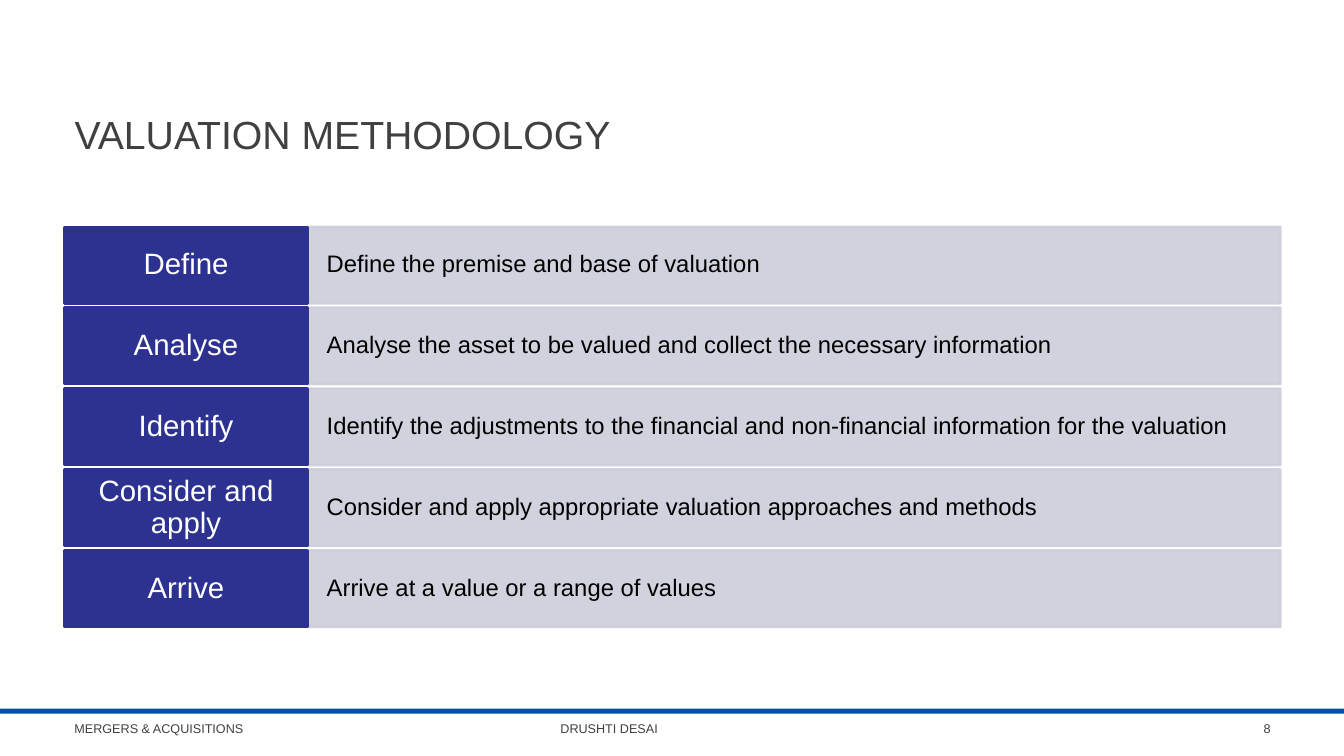
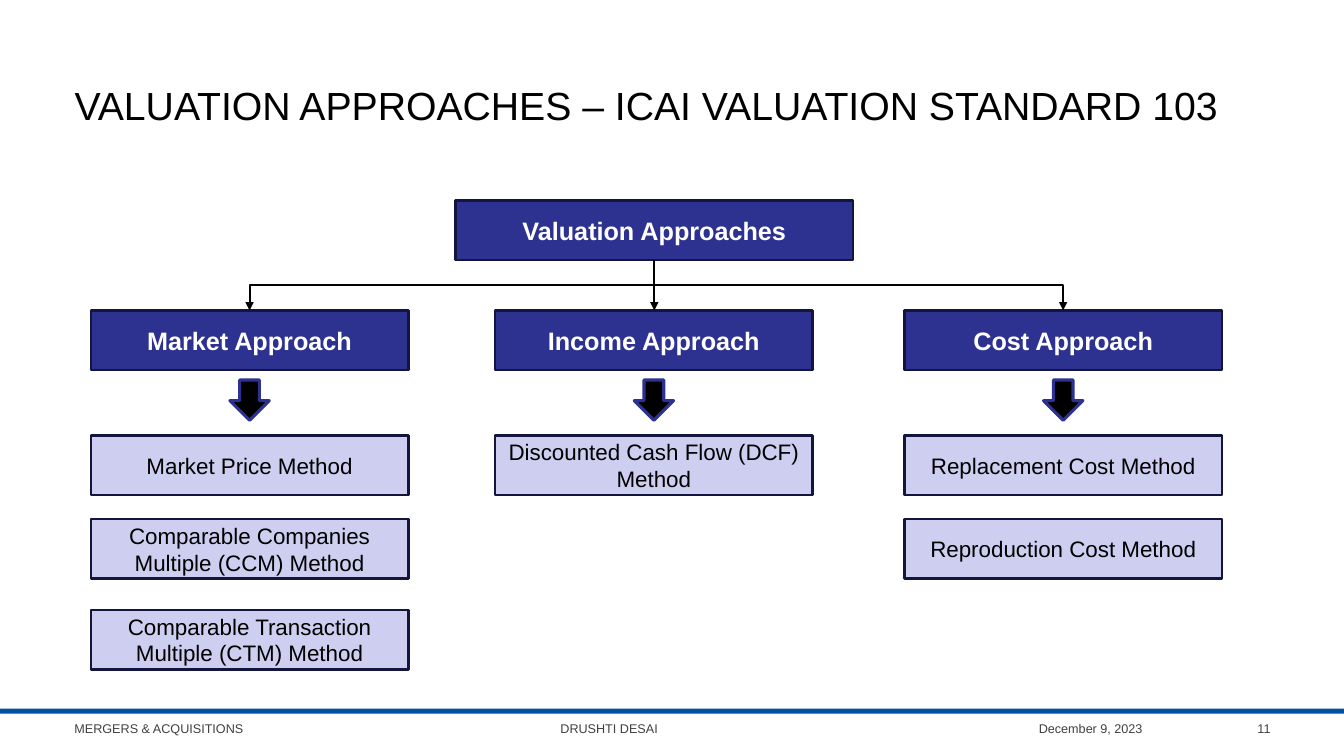
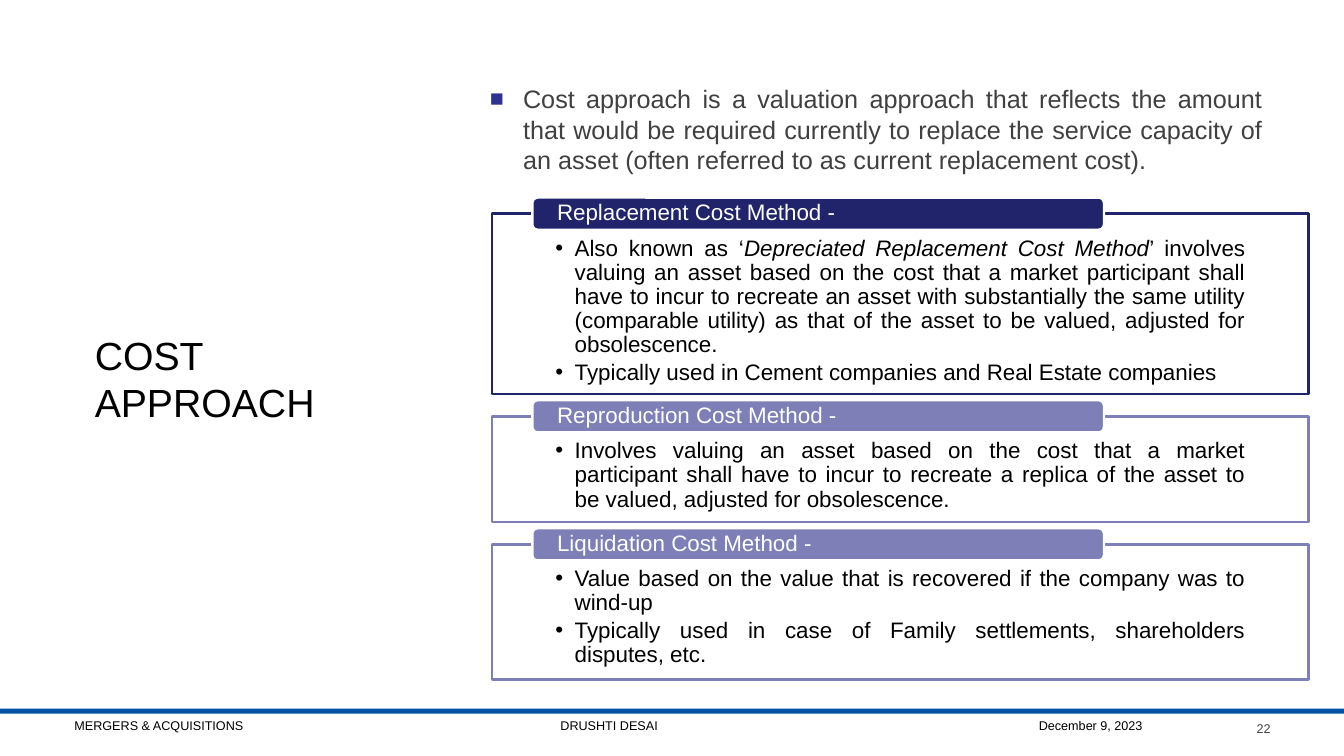
from dataclasses import dataclass

from lxml import etree
from pptx import Presentation
from pptx.dml.color import RGBColor
from pptx.enum.shapes import MSO_CONNECTOR, MSO_SHAPE
from pptx.enum.text import MSO_ANCHOR, MSO_AUTO_SIZE, PP_ALIGN
from pptx.oxml.ns import qn
from pptx.util import Inches, Pt

RECT, ROUND, DOWN = MSO_SHAPE.RECTANGLE, MSO_SHAPE.ROUNDED_RECTANGLE, MSO_SHAPE.DOWN_ARROW
ELBOW, STRAIGHT = MSO_CONNECTOR.ELBOW, MSO_CONNECTOR.STRAIGHT
LEFT, CENTER, RIGHT, JUSTIFY = PP_ALIGN.LEFT, PP_ALIGN.CENTER, PP_ALIGN.RIGHT, PP_ALIGN.JUSTIFY
TOP, MIDDLE = MSO_ANCHOR.TOP, MSO_ANCHOR.MIDDLE


@dataclass(frozen=True)
class Theme:
    font: str = "Arial"
    band: str = "0152A2"
    navy: str = "2D3190"
    edge: str = "14153F"
    deep: str = "21246B"
    muted: str = "7D7FB6"
    pale: str = "CECFF0"
    bar: str = "CDCEDB"
    grey: str = "404040"
    black: str = "000000"
    white: str = "FFFFFF"
    title: int = 28
    step: int = 21
    heading: int = 18
    detail: int = 17
    body: int = 16
    footer: int = 9
    line: float = 1.75


T = Theme()

COURSE, SPEAKER, DATE = "MERGERS & ACQUISITIONS", "DRUSHTI DESAI", "December 9, 2023"

STEPS = [
    ("Define", "Define the premise and base of valuation"),
    ("Analyse", "Analyse the asset to be valued and collect the necessary information"),
    ("Identify", "Identify the adjustments to the financial and non-financial information for the valuation"),
    ("Consider and apply", "Consider and apply appropriate valuation approaches and methods"),
    ("Arrive", "Arrive at a value or a range of values"),
]

APPROACHES = [
    (0.9, "Market Approach", [
        "Market Price Method",
        "Comparable Companies Multiple (CCM) Method",
        "Comparable Transaction Multiple (CTM) Method",
    ]),
    (4.91, "Income Approach", ["Discounted Cash Flow (DCF) Method"]),
    (8.97, "Cost Approach", ["Replacement Cost Method", "Reproduction Cost Method"]),
]

COST_INTRO = (
    "Cost approach is a valuation approach that reflects the amount that would be required "
    "currently to replace the service capacity of an asset (often referred to as current "
    "replacement cost)."
)
COST_METHODS = [
    (2.12, 1.79, T.deep, "Replacement Cost Method -", [
        [
            ("Also known as ‘", False),
            ("Depreciated Replacement Cost Method", True),
            ("’ involves valuing an asset based on the cost that a market participant shall have "
             "to incur to recreate an asset with substantially the same utility (comparable "
             "utility) as that of the asset to be valued, adjusted for obsolescence.", False),
        ],
        "Typically used in Cement companies and Real Estate companies",
    ]),
    (4.13, 1.05, T.muted, "Reproduction Cost Method -", [
        "Involves valuing an asset based on the cost that a market participant shall have to "
        "incur to recreate a replica of the asset to be valued, adjusted for obsolescence.",
    ]),
    (5.4, 1.34, T.muted, "Liquidation Cost Method -", [
        "Value based on the value that is recovered if the company was to wind-up",
        "Typically used in case of Family settlements, shareholders disputes, etc.",
    ]),
]


def rgb(value):
    return RGBColor.from_string(value)


def sub(parent, tag, **attrs):
    return etree.SubElement(parent, qn(tag), {k: str(v) for k, v in attrs.items()})


def set_bullet(p, char, indent, color, percent=100):
    pPr = p._p.get_or_add_pPr()
    pPr.set("marL", str(Inches(indent)))
    pPr.set("indent", str(-Inches(indent)))
    sub(sub(pPr, "a:buClr"), "a:srgbClr", val=color)
    sub(pPr, "a:buSzPct", val=percent * 1000)
    sub(pPr, "a:buFont", typeface=T.font)
    sub(pPr, "a:buChar", char=char)


def set_tab(p, pos):
    tabs = sub(p._p.get_or_add_pPr(), "a:tabLst")
    sub(tabs, "a:tab", pos=Inches(pos), algn="l")


def write(sp, paras, size, color, align=LEFT, anchor=MIDDLE, bold=False,
          insets=(0.1, 0.05, 0.1, 0.05), spacing=None, after=0, bullet=None, tab=None):
    tf = sp.text_frame
    tf.word_wrap = True
    tf.auto_size = MSO_AUTO_SIZE.NONE
    tf.vertical_anchor = anchor
    tf.margin_left, tf.margin_top, tf.margin_right, tf.margin_bottom = map(Inches, insets)
    for i, runs in enumerate(paras):
        p = tf.add_paragraph() if i else tf.paragraphs[0]
        if bullet:
            set_bullet(p, *bullet)
        if tab:
            set_tab(p, tab)
        p.alignment = align
        p.space_before = Pt(0)
        p.space_after = Pt(after)
        if spacing:
            p.line_spacing = spacing
        for text, italic in [(runs, False)] if isinstance(runs, str) else runs:
            r = p.add_run()
            r.text = text
            f = r.font
            f.name, f.size, f.bold, f.italic = T.font, Pt(size), bold, italic
            f.color.rgb = rgb(color)


def add_box(s, kind, at, fill, line=None, width=T.line, alpha=None):
    sp = s.shapes.add_shape(kind, *map(Inches, at))
    sp.shadow.inherit = False
    sp.fill.solid()
    sp.fill.fore_color.rgb = rgb(fill)
    if line:
        sp.line.color.rgb = rgb(line)
        sp.line.width = Pt(width)
    else:
        sp.line.fill.background()
    if alpha:
        for clr in list(sp.element.spPr.iter(qn("a:srgbClr"))):
            sub(clr, "a:alpha", val=alpha * 1000)
    return sp


def add_text(s, at, paras, size, color, **style):
    write(s.shapes.add_textbox(*map(Inches, at)), paras, size, color, **style)


def add_arrow(s, x1, y1, x2, y2):
    if x1 == x2:
        kind, ends, rot = STRAIGHT, (x1, y1, x2, y2), 0
    else:
        w, h = y2 - y1, abs(x2 - x1)
        left, top = (x1 + x2 - w) / 2, (y1 + y2 - h) / 2
        kind, rot = ELBOW, 90 if x2 < x1 else 270
        start, end = (left, left + w) if x2 < x1 else (left + w, left)
        ends = (start, top, end, top + h)
    c = s.shapes.add_connector(kind, *map(Inches, ends))
    c.line.color.rgb = rgb(T.black)
    c.line.width = Pt(1.5)
    spPr = c.element.spPr
    if rot:
        spPr.find(qn("a:xfrm")).set("rot", str(rot * 60000))
    sub(spPr.find(qn("a:ln")), "a:tailEnd", type="triangle")
    sub(spPr, "a:effectLst")


def add_slide(prs, title, at, color, number, date=None, footer_top=7.03, footer_color=T.grey):
    s = prs.slides.add_slide(prs.slide_layouts[5])
    sp = s.shapes.title
    sp.left, sp.top, sp.width, sp.height = map(Inches, at)
    write(sp, [title], T.title, color)
    add_text(s, (0.64, footer_top, 7.56, 0.4), [f"{COURSE}\t{SPEAKER}"],
             T.footer, footer_color, tab=4.82)
    if date:
        add_text(s, (8.32, footer_top, 3.11, 0.4), [date], T.footer, footer_color, align=RIGHT)
    add_text(s, (11.55, 7.03, 1.15, 0.4), [str(number)], T.footer, T.grey, align=RIGHT)
    return s


def add_band(prs, s):
    band = add_box(s, RECT, (0, 7.03, 13.33, 0.05), T.band)
    prs.slide_layouts[5].shapes.element.append(band.element)


def methodology(prs):
    s = add_slide(prs, "VALUATION METHODOLOGY", (0.64, 0.79, 12.06, 1.08), T.grey, 8)
    add_band(prs, s)
    first, last, h = 2.25, 5.46, 0.76
    pitch = (last - first) / (len(STEPS) - 1)
    for i, (step, detail) in enumerate(STEPS):
        y = first + i * pitch
        sp = add_box(s, RECT, (3.05, y, 9.65, h), T.bar, T.bar, alpha=90)
        write(sp, [detail], T.detail, T.black, insets=(0.19,) * 4, spacing=0.9)
        sp = add_box(s, RECT, (0.64, y, 2.41, h), T.navy, T.navy)
        write(sp, [step], T.step, T.white, align=CENTER,
              insets=(0.13, 0.07, 0.13, 0.07), spacing=0.9)


def approaches(prs):
    s = add_slide(prs, "VALUATION APPROACHES – ICAI VALUATION STANDARD 103",
                  (0.64, 0.5, 12.06, 1.08), T.black, 11, DATE)
    w, h, root_w, arrow_w = 3.15, 0.59, 3.94, 0.39
    root_x, root_y, head_y = 4.52, 1.99, 3.08
    method_tops = (4.32, 5.15, 6.05)
    mid = root_x + root_w / 2

    def head(text, at):
        sp = add_box(s, RECT, at, T.navy, T.edge)
        write(sp, [text], T.heading, T.white, align=CENTER, bold=True)

    head("Valuation Approaches", (root_x, root_y, root_w, h))
    for x, name, methods in APPROACHES:
        center = x + w / 2
        head(name, (x, head_y, w, h))
        end = mid if abs(center - mid) < 0.1 else center
        add_arrow(s, mid, root_y + h, end, head_y)
        add_box(s, DOWN, (center - arrow_w / 2, 3.77, arrow_w, 0.4), T.black, T.navy, 2.25)
        for y, method in zip(method_tops, methods):
            sp = add_box(s, RECT, (x, y, w, h), T.pale, T.edge)
            write(sp, [method], T.body, T.black, align=CENTER)


def cost_approach(prs):
    s = add_slide(prs, "COST APPROACH", (0.84, 2.6, 3.38, 2.3), T.black, 22, DATE, 7, T.black)
    add_text(s, (4.76, 0.5, 7.86, 1.56), [COST_INTRO], T.heading, T.grey,
             align=JUSTIFY, bullet=("■", 0.33, T.navy, 92))
    for y, h, color, name, points in COST_METHODS:
        sp = add_box(s, RECT, (4.88, y, 8.1, h), T.white, color)
        write(sp, points, T.body, T.black, align=JUSTIFY, anchor=TOP, spacing=0.9, after=2.5,
              insets=(0.63, 0.23, 0.63, 0.12), bullet=("•", 0.19, T.black))
        sp = add_box(s, ROUND, (5.28, y - 0.16, 5.67, 0.32), color, T.white)
        write(sp, [name], T.body, T.white, align=JUSTIFY, spacing=0.9,
              insets=(0.23, 0, 0.23, 0))


def main():
    prs = Presentation()
    prs.slide_width, prs.slide_height = Inches(13.33), Inches(7.5)
    methodology(prs)
    approaches(prs)
    cost_approach(prs)
    prs.save("out.pptx")


if __name__ == "__main__":
    main()
